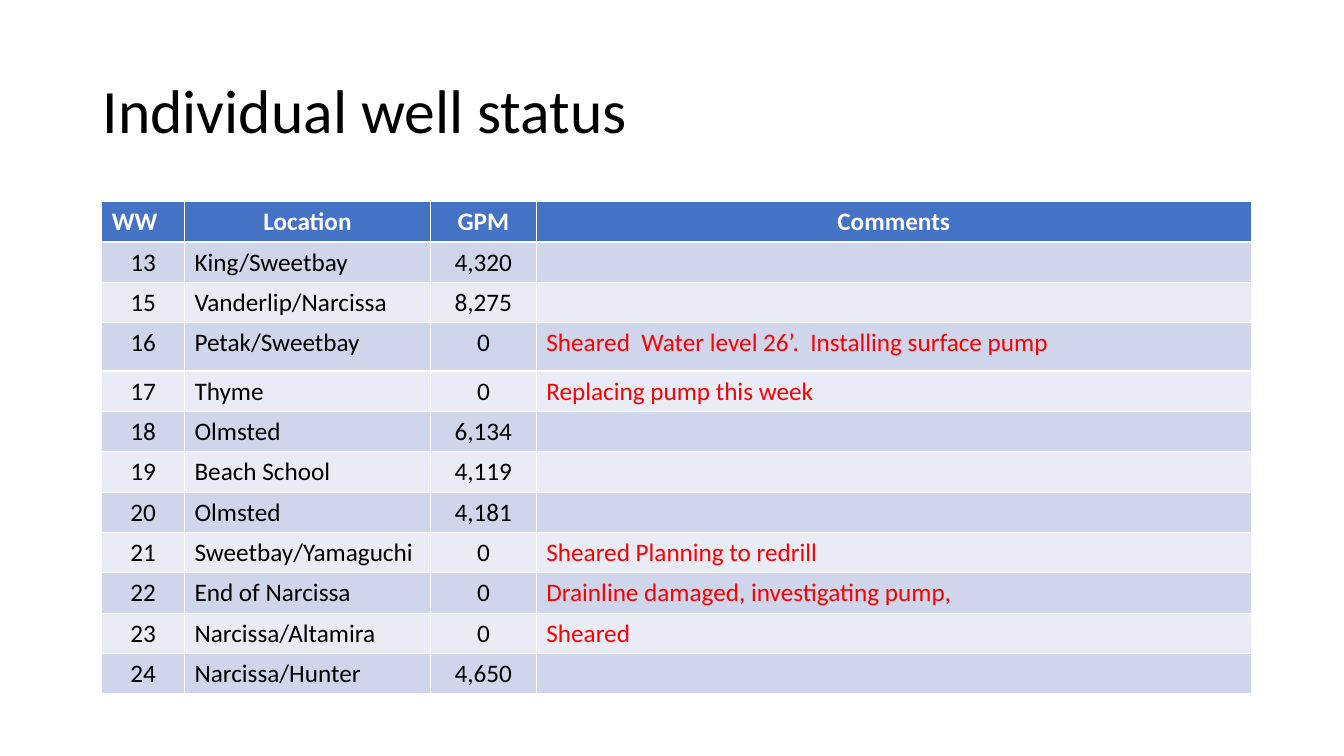
from pptx import Presentation, util as u
from pptx.dml.color import RGBColor
from pptx.enum import text

COLORS = {"ink": "000000", "header": "4472C4", "header_text": "FFFFFF",
          "odd": "CFD5EA", "even": "E9EBF5", "alert": "FF0000"}
FONT = "Calibri"
COLUMNS = [0.82, 2.44, 1.05, 7.09]
ROW_HEIGHT = 0.4
TALL_ROWS = {"16": 0.48}
HEADINGS = ("WW", "Location", "GPM", "Comments")
WELLS = [
    ("13", "King/Sweetbay", "4,320", ""),
    ("15", "Vanderlip/Narcissa", "8,275", ""),
    ("16", "Petak/Sweetbay", "0", "Sheared  Water level 26’.  Installing surface pump"),
    ("17", "Thyme", "0", "Replacing pump this week"),
    ("18", "Olmsted", "6,134", ""),
    ("19", "Beach School", "4,119", ""),
    ("20", "Olmsted", "4,181", ""),
    ("21", "Sweetbay/Yamaguchi", "0", "Sheared Planning to redrill"),
    ("22", "End of Narcissa", "0", "Drainline damaged, investigating pump,"),
    ("23", "Narcissa/Altamira", "0", "Sheared"),
    ("24", "Narcissa/Hunter", "4,650", ""),
]
LEFT, CENTER = text.PP_ALIGN.LEFT, text.PP_ALIGN.CENTER
HEADING_ALIGN = (LEFT, CENTER, CENTER, CENTER)
WELL_ALIGN = (CENTER, LEFT, CENTER, LEFT)


def style(paragraph, size, color, align=LEFT, bold=False):
    paragraph.alignment = align
    font = paragraph.font
    font.name, font.size, font.bold = FONT, u.Pt(size), bold
    font.color.rgb = RGBColor.from_string(COLORS[color])


def add_title(slide, box, words):
    frame = slide.shapes.add_textbox(*map(u.Inches, box)).text_frame
    frame.word_wrap = True
    frame.vertical_anchor = text.MSO_ANCHOR.MIDDLE
    heading = frame.paragraphs[0]
    heading.text = words
    heading.line_spacing = 0.9
    style(heading, 44, "ink")


def fill_cell(cell, words, fill, color, align, bold):
    cell.fill.solid()
    cell.fill.fore_color.rgb = RGBColor.from_string(COLORS[fill])
    cell.text = words
    style(cell.text_frame.paragraphs[0], 18, color, align, bold)


def add_well_table(slide, left, top):
    records = [HEADINGS] + WELLS
    heights = [TALL_ROWS.get(record[0], ROW_HEIGHT) for record in records]
    box = (left, top, sum(COLUMNS), sum(heights))
    table = slide.shapes.add_table(len(records), len(COLUMNS), *map(u.Inches, box)).table
    for column, width in zip(table.columns, COLUMNS):
        column.width = u.Inches(width)
    for r, (record, height) in enumerate(zip(records, heights)):
        table.rows[r].height = u.Inches(height)
        is_header = r == 0
        fill = "header" if is_header else ("even", "odd")[r % 2]
        aligns = HEADING_ALIGN if is_header else WELL_ALIGN
        for c, (words, align) in enumerate(zip(record, aligns)):
            body_color = "alert" if HEADINGS[c] == "Comments" else "ink"
            color = "header_text" if is_header else body_color
            fill_cell(table.cell(r, c), words, fill, color, align, is_header)


def main():
    deck = Presentation()
    deck.slide_width, deck.slide_height = u.Inches(13.33), u.Inches(7.5)
    slide = deck.slides.add_slide(deck.slide_layouts[6])
    add_title(slide, (0.92, 0.4, 11.5, 1.45), "Individual well status")
    add_well_table(slide, 1.01, 2)
    deck.save("out.pptx")


if __name__ == "__main__":
    main()
